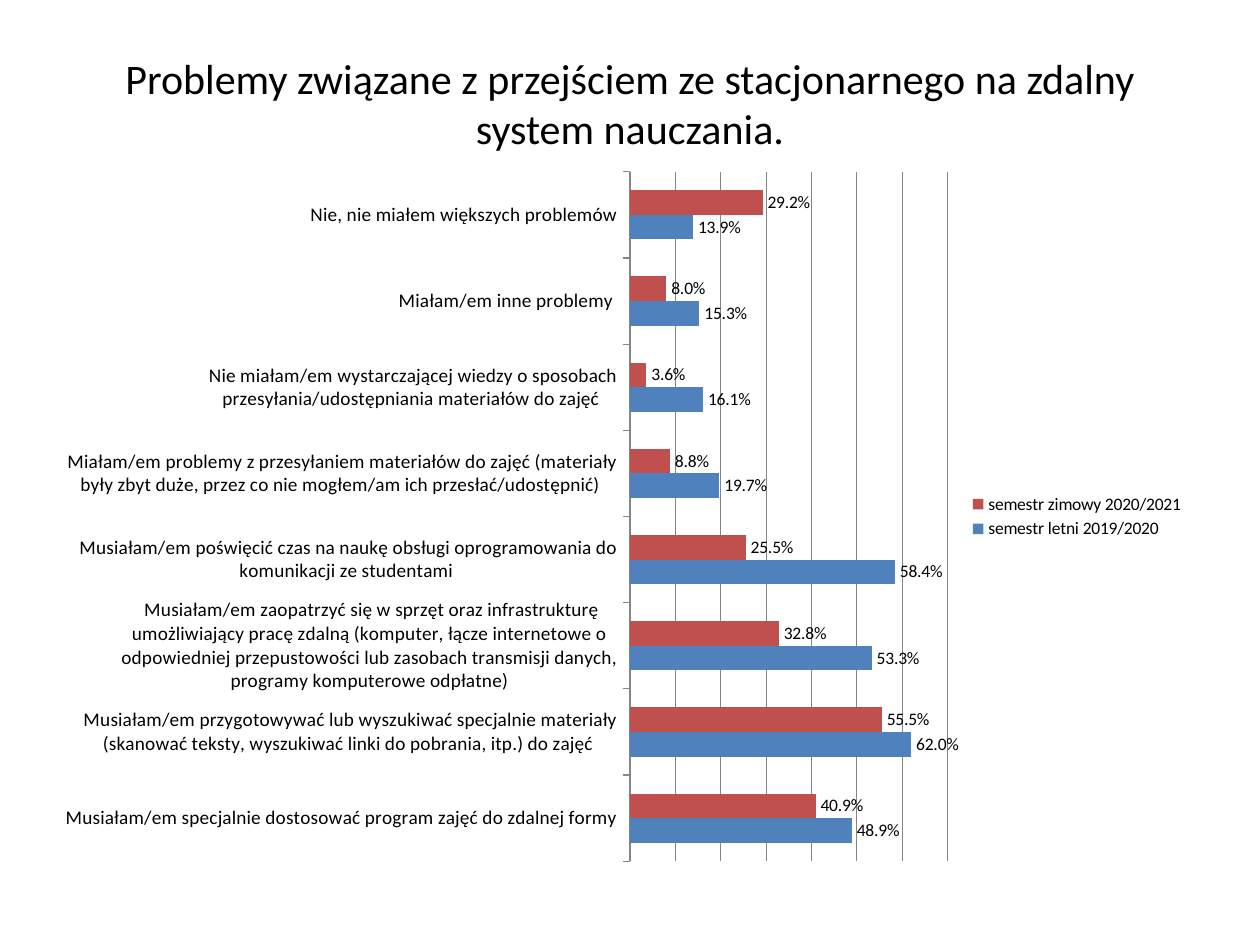
from lxml.etree import SubElement
from pptx import Presentation
from pptx.chart.data import CategoryChartData
from pptx.dml.color import RGBColor
from pptx.enum.chart import (XL_CHART_TYPE, XL_LABEL_POSITION,
                             XL_LEGEND_POSITION, XL_TICK_MARK)
from pptx.enum.text import MSO_ANCHOR, PP_ALIGN
from pptx.oxml.ns import qn
from pptx.util import Inches, Pt

BLACK = RGBColor(0x00, 0x00, 0x00)
GRAY = RGBColor(0x86, 0x86, 0x86)
BLUE = RGBColor(0x4F, 0x81, 0xBD)
RED = RGBColor(0xC0, 0x50, 0x4D)
FONT = "Calibri"
PERCENT = "###0.0%"

TITLE = "Problemy związane z przejściem ze stacjonarnego na zdalny system nauczania."

# Problem, summer term share, winter term share
PROBLEMS = [
    ("Musiałam/em specjalnie dostosować program zajęć do zdalnej formy",
     0.489, 0.409),
    (" Musiałam/em przygotowywać lub wyszukiwać specjalnie materiały (skanować "
     "teksty, wyszukiwać linki do pobrania, itp.) do zajęć", 0.62, 0.555),
    (" Musiałam/em zaopatrzyć się w sprzęt oraz infrastrukturę umożliwiający "
     "pracę zdalną (komputer, łącze internetowe o odpowiedniej przepustowości "
     "lub zasobach transmisji danych, programy komputerowe odpłatne)",
     0.533, 0.328),
    (" Musiałam/em poświęcić czas na naukę obsługi oprogramowania do "
     "komunikacji ze studentami", 0.584, 0.255),
    (" Miałam/em problemy z przesyłaniem materiałów do zajęć (materiały były "
     "zbyt duże, przez co nie mogłem/am ich przesłać/udostępnić)",
     0.197, 0.088),
    (" Nie miałam/em wystarczającej wiedzy o sposobach "
     "przesyłania/udostępniania materiałów do zajęć", 0.161, 0.036),
    (" Miałam/em inne problemy ", 0.153, 0.08),
    (" Nie, nie miałem większych problemów", 0.139, 0.292),
]
TERMS = [("semestr letni 2019/2020", BLUE), ("semestr zimowy 2020/2021", RED)]


def set_attrs(obj, **values):
    for name, value in values.items():
        setattr(obj, name, value)


def set_font(font, size):
    set_attrs(font, name=FONT, size=Pt(size), bold=False)
    font.color.rgb = BLACK


def set_line(fmt):
    fmt.line.color.rgb = GRAY
    fmt.line.width = Pt(0.75)


def add_title(s, text):
    sp = s.shapes.title
    set_attrs(sp, left=Inches(0.5), top=Inches(0.3),
              width=Inches(9), height=Inches(1.03))
    tf = sp.text_frame
    set_attrs(tf, text=text, word_wrap=True, vertical_anchor=MSO_ANCHOR.MIDDLE)
    p = tf.paragraphs[0]
    p.alignment = PP_ALIGN.CENTER
    set_font(p.runs[0].font, 24)


def place_plot(chart, **fractions):
    """Fix the inner plot area, in fractions of the chart's size."""
    area = chart._chartSpace.chart.plotArea
    for old in area.findall(qn("c:layout")):
        area.remove(old)
    layout = SubElement(area, qn("c:layout"))
    area.insert(0, layout)
    manual = SubElement(layout, qn("c:manualLayout"))
    settings = {"layoutTarget": "inner", "xMode": "edge", "yMode": "edge",
                **fractions}
    for tag, value in settings.items():
        SubElement(manual, qn(f"c:{tag}")).set("val", str(value))


def format_axes(chart):
    cat = chart.category_axis
    set_attrs(cat, major_tick_mark=XL_TICK_MARK.OUTSIDE,
              minor_tick_mark=XL_TICK_MARK.NONE, has_major_gridlines=False)
    set_font(cat.tick_labels.font, 11)
    set_line(cat.format)
    val = chart.value_axis
    set_attrs(val, visible=False, has_major_gridlines=True,
              minimum_scale=0, maximum_scale=0.7, major_unit=0.1)
    set_attrs(val.tick_labels, number_format=PERCENT,
              number_format_is_linked=False)
    set_line(val.major_gridlines.format)


def format_series(series, color):
    series.format.fill.solid()
    series.format.fill.fore_color.rgb = color
    series.invert_if_negative = False
    labels = series.data_labels
    set_attrs(labels, show_value=True, number_format=PERCENT,
              number_format_is_linked=False,
              position=XL_LABEL_POSITION.OUTSIDE_END)
    set_font(labels.font, 10)


def add_problem_chart(s):
    names, *shares = zip(*PROBLEMS)
    data = CategoryChartData(number_format=PERCENT)
    data.categories = names
    for (term, _), values in zip(TERMS, shares):
        data.add_series(term, values)
    chart = s.shapes.add_chart(
        XL_CHART_TYPE.BAR_CLUSTERED, Inches(0.5), Inches(1.25),
        Inches(9), Inches(5.7), data).chart
    set_attrs(chart, has_title=False, has_legend=True)
    set_font(chart.font, 10)
    set_attrs(chart.legend, position=XL_LEGEND_POSITION.RIGHT,
              include_in_layout=False)
    set_font(chart.legend.font, 10)
    plot = chart.plots[0]
    set_attrs(plot, gap_width=150, overlap=0, vary_by_categories=False)
    for series, (_, color) in zip(plot.series, TERMS):
        format_series(series, color)
    format_axes(chart)
    place_plot(chart, x=0.5, y=0.02, w=0.28, h=0.96)


def main():
    prs = Presentation()
    set_attrs(prs, slide_width=Inches(10), slide_height=Inches(7.5))
    s = prs.slides.add_slide(prs.slide_layouts[5])
    add_title(s, TITLE)
    add_problem_chart(s)
    prs.save("out.pptx")


if __name__ == "__main__":
    main()
